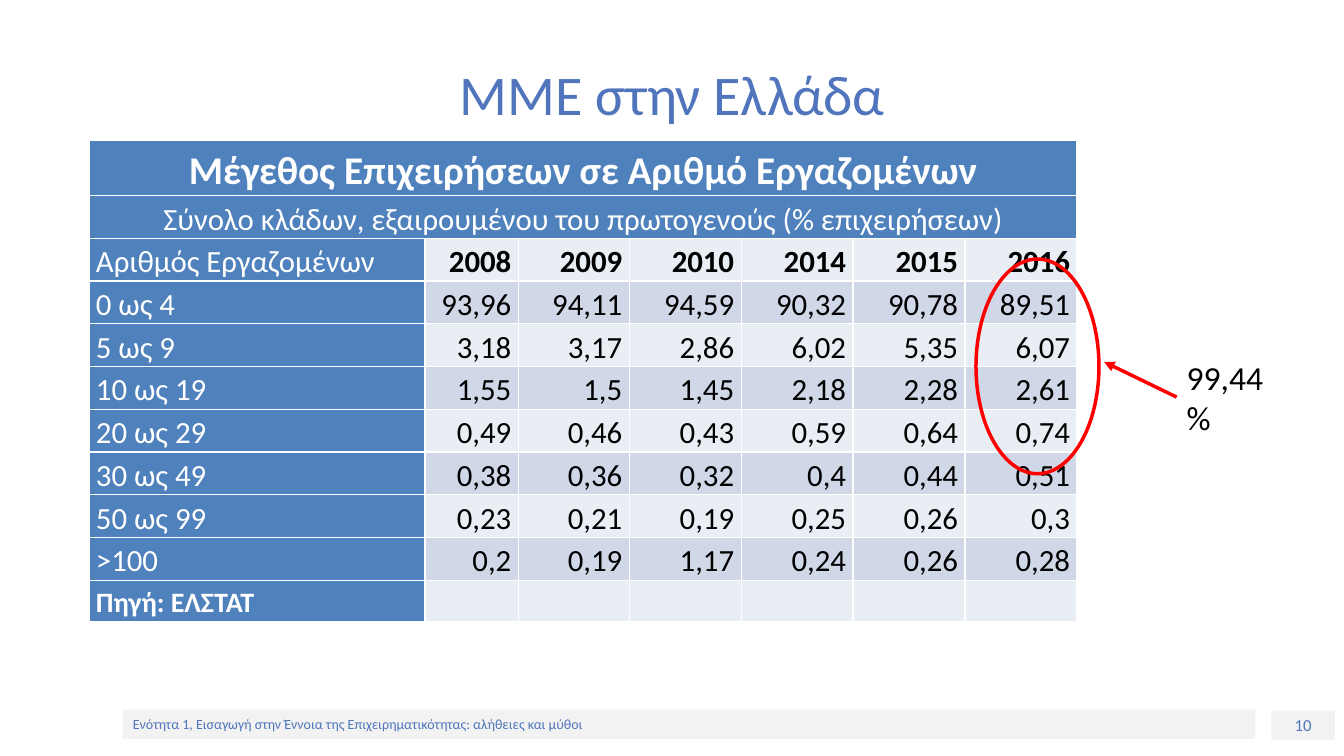
from lxml.etree import SubElement
from pptx import Presentation
from pptx.dml.color import RGBColor
from pptx.enum.shapes import MSO_CONNECTOR, MSO_SHAPE
from pptx.enum.text import MSO_ANCHOR, PP_ALIGN
from pptx.oxml.ns import qn
from pptx.util import Inches, Pt

WIDTH, HEIGHT = Inches(13.33), Inches(7.5)
COLORS = {"blue": "5075BC", "head": "4F81BD", "light": "E9EDF4", "band": "D0D8E8",
          "white": "FFFFFF", "black": "000000", "red": "FF0000", "grey": "F2F2F2"}
COL_SHARES = [25, 6.95, 8.25] + [8.33] * 4
ROW_SHARES = [7.33] + [5.6] * 9 + [5.47]
TABLE_ROWS = [
    ["Μέγεθος Επιχειρήσεων σε Αριθμό Εργαζομένων"],
    ["Σύνολο κλάδων, εξαιρουμένου του πρωτογενούς (% επιχειρήσεων)"],
    ["Αριθμός Εργαζομένων", "2008", "2009", "2010", "2014", "2015", "2016"],
    ["0 ως 4", "93,96", "94,11", "94,59", "90,32", "90,78", "89,51"],
    ["5 ως 9", "3,18", "3,17", "2,86", "6,02", "5,35", "6,07"],
    ["10 ως 19", "1,55", "1,5", "1,45", "2,18", "2,28", "2,61"],
    ["20 ως 29", "0,49", "0,46", "0,43", "0,59", "0,64", "0,74"],
    ["30 ως 49", "0,38", "0,36", "0,32", "0,4", "0,44", "0,51"],
    ["50 ως 99", "0,23", "0,21", "0,19", "0,25", "0,26", "0,3"],
    [">100", "0,2", "0,19", "1,17", "0,24", "0,26", "0,28"],
    ["Πηγή: ΕΛΣΤΑΤ"],
]


def rgb(name):
    return RGBColor.from_string(COLORS[name])


def across(share):
    return int(WIDTH * share / 100)


def down(share):
    return int(HEIGHT * share / 100)


def box(left, top, width, height):
    return across(left), down(top), across(width), down(height)


def set_attrs(target, values):
    for name, value in values.items():
        setattr(target, name, value)


def write(tf, text, size, color, align=PP_ALIGN.LEFT, bold=False, **spacing):
    p = tf.paragraphs[0]
    set_attrs(p, {"alignment": align, **spacing})
    r = p.add_run()
    r.text = text
    set_attrs(r.font, {"name": "Calibri", "size": Pt(size), "bold": bold})
    r.font.color.rgb = rgb(color)


def add_title(s, text):
    sp = s.shapes.title
    set_attrs(sp, dict(zip(("left", "top", "width", "height"), box(5, 4, 90, 16.67))))
    sp.text_frame.vertical_anchor = MSO_ANCHOR.MIDDLE
    write(sp.text_frame, text, 40, "blue", PP_ALIGN.CENTER)


def add_footer(s, place, text, size, align):
    sp = s.shapes.add_shape(MSO_SHAPE.RECTANGLE, *box(*place))
    sp.shadow.inherit = False
    sp.fill.solid()
    sp.fill.fore_color.rgb = rgb("grey")
    sp.line.fill.background()
    set_attrs(sp.text_frame, {"word_wrap": True, "vertical_anchor": MSO_ANCHOR.MIDDLE})
    write(sp.text_frame, text, size, "blue", align)


def format_cell(cell, row, col, text):
    heading = row < 2
    label = heading or col == 0
    set_attrs(cell, {"margin_left": Inches(0.07), "margin_right": Inches(0.07),
                     "margin_top": 0, "margin_bottom": 0,
                     "vertical_anchor": MSO_ANCHOR.MIDDLE if label and row > 2 else MSO_ANCHOR.BOTTOM})
    cell.fill.solid()
    cell.fill.fore_color.rgb = rgb("head" if label else "band" if row % 2 else "light")
    if text:
        align = PP_ALIGN.CENTER if heading else PP_ALIGN.LEFT if label else PP_ALIGN.RIGHT
        last = len(TABLE_ROWS) - 1
        write(cell.text_frame, text, {0: 28, last: 20}.get(row, 22),
              "white" if label else "black", align,
              row in (0, last) or (row == 2 and col > 0),
              line_spacing=1.14, space_after=Pt(8))


def add_size_table(s):
    place = box(6.62, 18.53, sum(COL_SHARES), sum(ROW_SHARES))
    table = s.shapes.add_table(len(ROW_SHARES), len(COL_SHARES), *place).table
    table.horz_banding = False
    for column, share in zip(table.columns, COL_SHARES):
        column.width = across(share)
    for row, share in zip(table.rows, ROW_SHARES):
        row.height = down(share)
    for row, texts in enumerate(TABLE_ROWS):
        if row < 2:
            table.cell(row, 0).merge(table.cell(row, len(COL_SHARES) - 1))
        for col in range(len(COL_SHARES)):
            format_cell(table.cell(row, col), row, col, texts[col] if col < len(texts) else "")


def red_line(shape):
    shape.line.color.rgb = rgb("red")
    shape.line.width = Pt(2.5)


def add_ring(s, place):
    sp = s.shapes.add_shape(MSO_SHAPE.OVAL, *box(*place))
    sp.shadow.inherit = False
    sp.fill.background()
    red_line(sp)


def add_arrow(s, start, end):
    line = s.shapes.add_connector(MSO_CONNECTOR.STRAIGHT, *box(*start, *end))
    red_line(line)
    SubElement(line.line._get_or_add_ln(), qn("a:tailEnd"), type="triangle")
    SubElement(line._element.spPr, qn("a:effectLst"))


def add_label(s, place, text):
    tf = s.shapes.add_textbox(*box(*place)).text_frame
    set_attrs(tf, {"word_wrap": False, "vertical_anchor": MSO_ANCHOR.MIDDLE})
    write(tf, text, 24, "black")


def main():
    prs = Presentation()
    set_attrs(prs, {"slide_width": WIDTH, "slide_height": HEIGHT})
    s = prs.slides.add_slide(prs.slide_layouts[5])
    add_footer(s, (94.6, 94, 4.73, 3.87), "10", 12, PP_ALIGN.CENTER)
    add_footer(s, (9.15, 93.87, 84.25, 3.87),
               "Ενότητα 1, Εισαγωγή στην Έννοια της Επιχειρηματικότητας: αλήθειες και μύθοι",
               10, PP_ALIGN.LEFT)
    add_title(s, "ΜΜΕ στην Ελλάδα")
    add_size_table(s)
    add_ring(s, (72.62, 34.27, 9.15, 28.4))
    add_arrow(s, (87.55, 52.53), (82.15, 47.87))
    add_label(s, (87.55, 45.87, 7.5, 13.33), "99,44%")
    prs.save("out.pptx")


if __name__ == "__main__":
    main()
